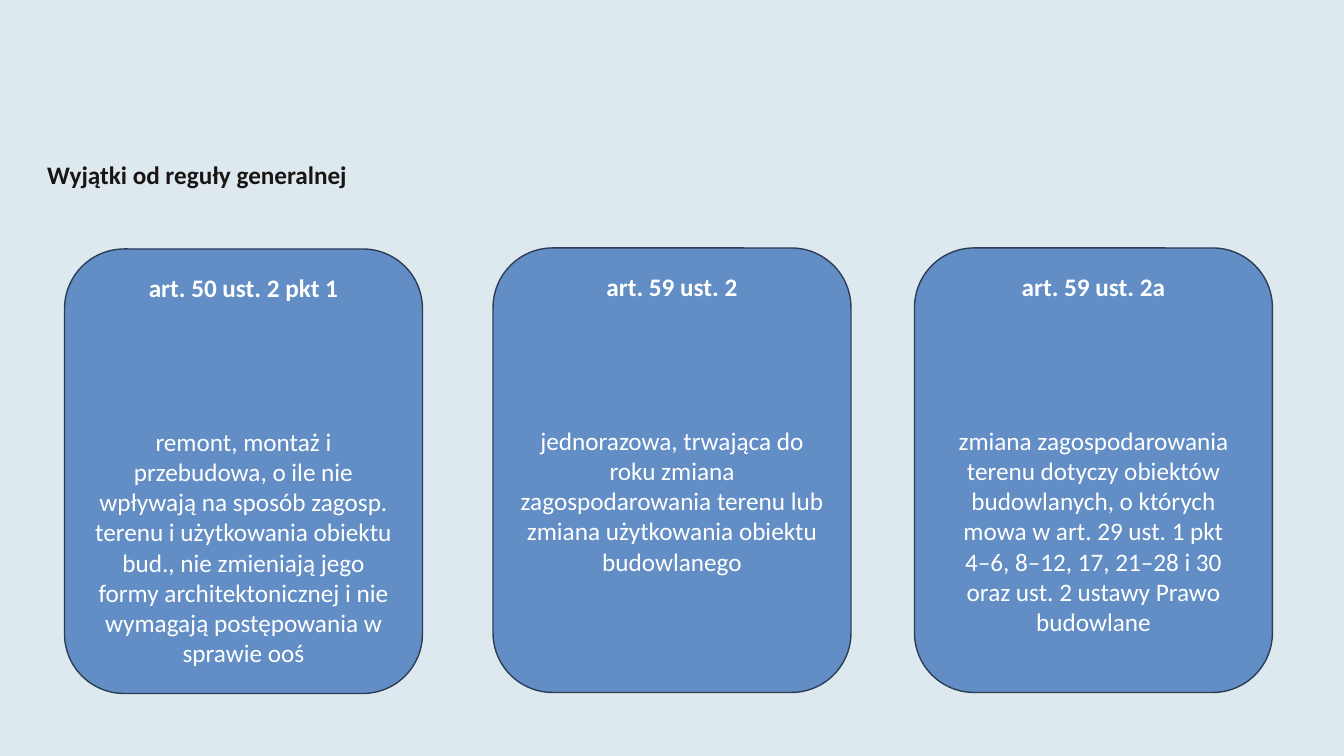
from pptx import Presentation
from pptx.dml.color import RGBColor
from pptx.enum.shapes import MSO_SHAPE
from pptx.enum.text import MSO_ANCHOR, PP_ALIGN
from pptx.util import Inches, Pt

CARD_SIZE = (3.55, 4.41)
CARDS = [
    (0.64, 2.47, 0.1, "art. 50 ust. 2 pkt 1",
     "remont, montaż i przebudowa, o ile nie wpływają na sposób zagosp. terenu "
     "i użytkowania obiektu bud., nie zmieniają jego formy architektonicznej "
     "i nie wymagają postępowania w sprawie ooś"),
    (4.89, 2.46, 0.1, "art. 59 ust. 2",
     "jednorazowa, trwająca do roku zmiana zagospodarowania terenu "
     "lub zmiana użytkowania obiektu budowlanego"),
    (9.07, 2.46, 0.21, "art. 59 ust. 2a",
     "zmiana zagospodarowania terenu dotyczy obiektów budowlanych, o których "
     "mowa w art. 29 ust. 1 pkt 4–6, 8–12, 17, 21–28 i 30 oraz ust. 2 ustawy "
     "Prawo budowlane"),
]


def color(value):
    """Turn a hex string into a colour."""
    return RGBColor.from_string(value)


def write(paragraph, text, ink, bold=False):
    """Fill a paragraph with text in the slide's font."""
    paragraph.text = text
    for span in paragraph.runs:
        span.font.name = "Calibri"
        span.font.size = Pt(18)
        span.font.bold = bold
        span.font.color.rgb = color(ink)


def add_heading(page, left, top, width, height):
    """Place the slide heading in the given box."""
    box = page.shapes.add_textbox(*map(Inches, (left, top, width, height)))
    box.text_frame.word_wrap = True
    paragraph = box.text_frame.paragraphs[0]
    paragraph.line_spacing = 1.2
    write(paragraph, "Wyjątki od reguły generalnej", "191515", bold=True)


def add_card(page, left, top, width, height, inset, title, body):
    """Place a rounded card with a bold title and a body below it."""
    card = page.shapes.add_shape(
        MSO_SHAPE.ROUNDED_RECTANGLE, *map(Inches, (left, top, width, height)))
    card.shadow.inherit = False
    card.fill.solid()
    card.fill.fore_color.rgb = color("628EC5")
    card.line.color.rgb = color("2B3E56")
    card.line.width = Pt(1)
    frame = card.text_frame
    frame.word_wrap = True
    frame.vertical_anchor = MSO_ANCHOR.TOP
    frame.margin_left = frame.margin_right = Inches(inset)
    frame.margin_top = Inches(0.06)
    frame.margin_bottom = Inches(0)
    write(frame.paragraphs[0], title, "FFFFFF", bold=True)
    write(frame.add_paragraph(), body, "FFFFFF")
    for paragraph in frame.paragraphs:
        paragraph.alignment = PP_ALIGN.CENTER
    frame.paragraphs[1].space_before = Pt(88)


def main():
    """Build the slide and save the deck."""
    deck = Presentation()
    deck.slide_width, deck.slide_height = Inches(13.33), Inches(7.5)
    page = deck.slides.add_slide(deck.slide_layouts[6])
    page.background.fill.solid()
    page.background.fill.fore_color.rgb = color("DEE8EF")
    add_heading(page, 0.37, 1.47, 12.6, 0.9)
    for left, top, inset, title, body in CARDS:
        add_card(page, left, top, *CARD_SIZE, inset, title, body)
    deck.save("out.pptx")


if __name__ == "__main__":
    main()
